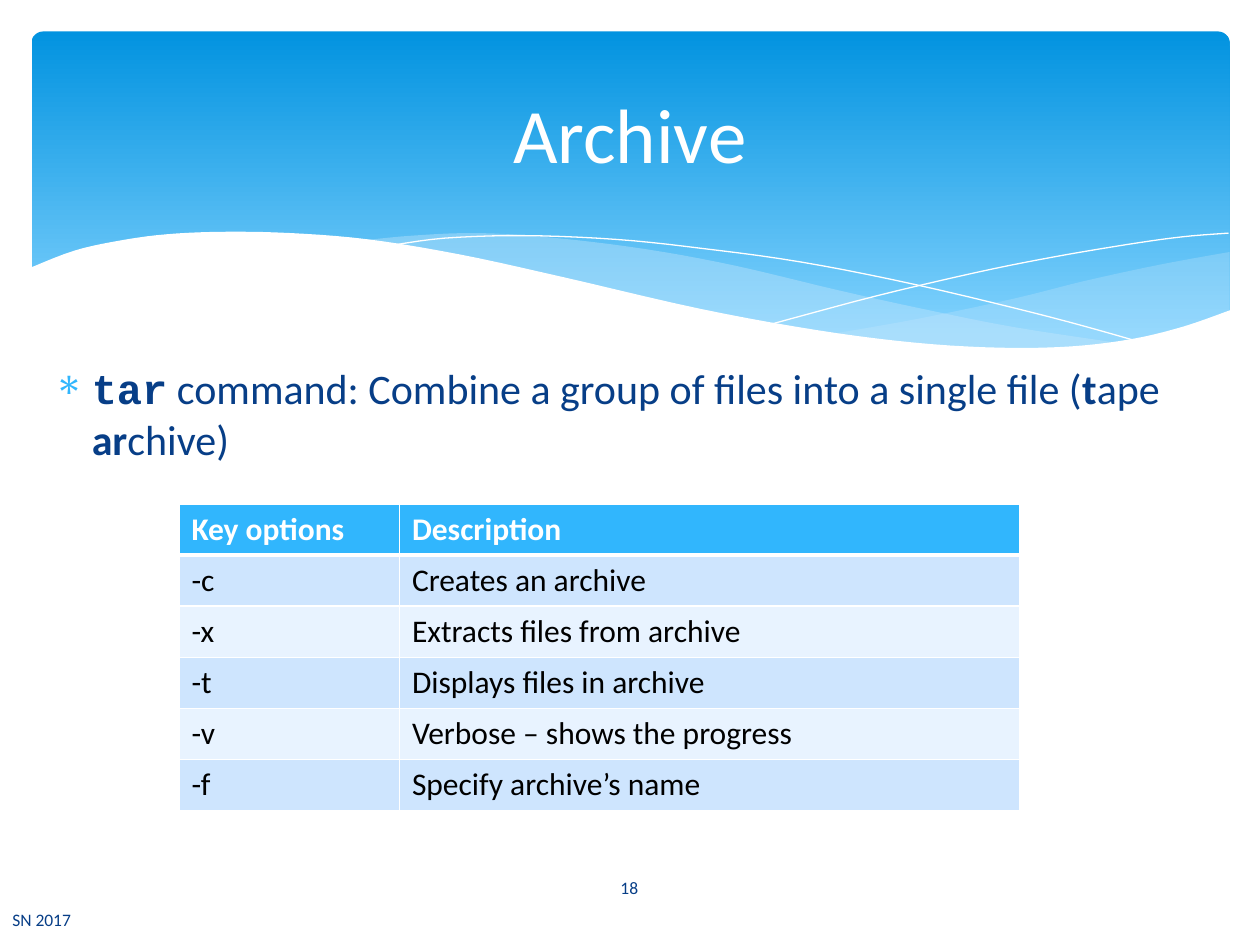
import pptx
import pptx.dml.color
import pptx.enum.shapes
import pptx.enum.text
import pptx.oxml
import pptx.oxml.ns
import pptx.util
from pptx.util import Inches

NAVY, SKY, WHITE, BLACK, ICE = "073E87", "31B6FD", "FFFFFF", "000000", "C6E7FC"
BANDS = ("CEE5FE", "E8F3FF")
ALIGN = pptx.enum.text.PP_ALIGN
ANCHOR = pptx.enum.text.MSO_ANCHOR

OPTIONS = [
    ("Key options", "Description"),
    ("-c", "Creates an archive"),
    ("-x", "Extracts files from archive"),
    ("-t", "Displays files in archive"),
    ("-v", "Verbose – shows the progress"),
    ("-f", "Specify archive’s name"),
]

RIGHT_WAVE_TOP = [(6.61, 2.65), (7.29, 2.53), (8.05, 2.37), (8.61, 2.23),
                  (9.21, 2.1), (9.76, 2)]
RIGHT_WAVE_BOTTOM = [(9.76, 2.47), (9.35, 2.62), (8.89, 2.72), (8.44, 2.77),
                     (8.03, 2.78), (7.45, 2.75), (6.61, 2.65)]
MIDDLE_WAVE_TOP = [(2.86, 1.91), (3.28, 1.87), (3.8, 1.85), (4.42, 1.89), (5.14, 1.98),
                   (5.84, 2.11), (6.68, 2.31), (7.41, 2.47), (8.07, 2.6), (8.93, 2.73)]
MIDDLE_WAVE_BOTTOM = [(8.93, 2.73), (8.57, 2.77), (8.07, 2.78), (7.48, 2.76), (6.8, 2.68),
                      (6.01, 2.55), (5.3, 2.4), (4.49, 2.22), (3.83, 2.07), (2.86, 1.91)]
FALLING_LINE = [(3.09, 1.95), (3.53, 1.89), (4.16, 1.87), (4.89, 1.9), (5.56, 1.97),
                (6.36, 2.08), (7.27, 2.26), (8.31, 2.51), (9.07, 2.72)]
RISING_LINE = [(6.13, 2.57), (6.95, 2.35), (7.76, 2.16), (8.36, 2.04), (8.95, 1.94),
               (9.38, 1.88), (9.75, 1.85)]
BANNER_EDGE = [(9.77, 2.46), (9.4, 2.59), (8.99, 2.69), (8.5, 2.75), (7.93, 2.76),
               (7.26, 2.72), (6.48, 2.62), (5.55, 2.45), (4.47, 2.2), (3.65, 2.02),
               (2.92, 1.9), (2.3, 1.85), (1.77, 1.84), (1.32, 1.86), (0.95, 1.91),
               (0.59, 1.99), (0.23, 2.13)]


def color(hex_string):
    return pptx.dml.color.RGBColor.from_string(hex_string)


def smooth(points, steps=5):
    """Return a Catmull-Rom curve through the points as a dense point list."""
    padded = [points[0], *points, points[-1]]
    curve = []
    for a, b, c, d in zip(padded, padded[1:], padded[2:], padded[3:]):
        for step in range(steps):
            t = step / steps
            curve.append(tuple(
                q + t * (r - p) / 2 + t**2 * (p - 2.5 * q + 2 * r - s / 2)
                + t**3 * (3 * q - p - 3 * r + s) / 2
                for p, q, r, s in zip(a, b, c, d)))
    return curve + [points[-1]]


class SlideBuilder:
    font = "Calibri"

    def __init__(self, presentation):
        self.slide = presentation.slides.add_slide(presentation.slide_layouts[5])
        self.shapes = self.slide.shapes

    def style_run(self, run, size, hex_color, bold=False, font=None):
        run.font.size = pptx.util.Pt(size)
        run.font.name = font or self.font
        run.font.bold = bold
        run.font.color.rgb = color(hex_color)

    def place_text(self, shape, box, text, size, hex_color, align):
        shape.left, shape.top, shape.width, shape.height = map(Inches, box)
        frame = shape.text_frame
        frame.text = text
        frame.word_wrap = True
        frame.vertical_anchor = ANCHOR.MIDDLE
        frame.paragraphs[0].alignment = align
        self.style_run(frame.paragraphs[0].runs[0], size, hex_color)

    def title(self, box, text):
        title = self.shapes.title
        self.place_text(title, box, text, 44, WHITE, ALIGN.CENTER)
        title.element.getparent().append(title.element)  # in front of the banner

    def label(self, box, text, align=ALIGN.LEFT):
        shape = self.shapes.add_textbox(0, 0, 0, 0)
        self.place_text(shape, box, text, 10, NAVY, align)

    def bullet(self, box, runs):
        frame = self.shapes.add_textbox(*map(Inches, box)).text_frame
        frame.word_wrap = True
        paragraph = frame.paragraphs[0]
        paragraph.space_before = pptx.util.Pt(4.8)
        for text, bold, font in runs:
            run = paragraph.add_run()
            run.text = text
            self.style_run(run, 24, NAVY, bold, font)
        properties = paragraph._p.get_or_add_pPr()
        properties.set("marL", str(Inches(0.3)))
        properties.set("indent", str(Inches(-0.3)))
        marker = pptx.oxml.ns.qn("a:buClr")
        bullet_color = properties.makeelement(marker, {})
        properties.append(bullet_color)
        bullet_color.append(bullet_color.makeelement(pptx.oxml.ns.qn("a:srgbClr"), {"val": SKY}))
        properties.append(properties.makeelement(pptx.oxml.ns.qn("a:buChar"), {"char": "∗"}))

    def banner(self, box):
        shape = self.shapes.add_shape(
            pptx.enum.shapes.MSO_SHAPE.ROUNDED_RECTANGLE, *map(Inches, box))
        shape.adjustments[0] = 0.034
        shape.shadow.inherit = False
        shape.line.fill.background()
        shape.fill.gradient()
        shape.fill.gradient_angle = 270
        stops = shape.fill.gradient_stops
        for stop, position, hex_color in zip(stops, (0, 0.9), ("0293E0", "83D3FE")):
            stop.position = position
            stop.color.rgb = color(hex_color)

    def outline(self, points, closed):
        points = [(Inches(x), Inches(y)) for x, y in points]
        builder = self.shapes.build_freeform(*points[0])
        builder.add_line_segments(points[1:], close=closed)
        shape = builder.convert_to_shape()
        shape.shadow.inherit = False
        return shape

    def wave(self, points, hex_color, opacity=100):
        shape = self.outline(points, closed=True)
        shape.line.fill.background()
        shape.fill.solid()
        shape.fill.fore_color.rgb = color(hex_color)
        if opacity < 100:
            fill = shape.element.spPr.find(pptx.oxml.ns.qn("a:solidFill"))
            fill[0].append(fill.makeelement(
                pptx.oxml.ns.qn("a:alpha"), {"val": str(opacity * 1000)}))

    def hairline(self, points):
        shape = self.outline(points, closed=False)
        shape.fill.background()
        shape.line.color.rgb = color(WHITE)
        shape.line.width = 0

    def cell_borders(self, cell, top, bottom):
        properties = cell._tc.get_or_add_tcPr()
        for side, points in (("L", 1), ("R", 1), ("T", top), ("B", bottom)):
            properties.append(pptx.oxml.parse_xml(
                f'<a:ln{side} {pptx.oxml.ns.nsdecls("a")} w="{pptx.util.Pt(points)}">'
                f'<a:solidFill><a:srgbClr val="{WHITE}"/></a:solidFill></a:ln{side}>'))

    def table(self, box, column_widths, rows):
        table = self.shapes.add_table(
            len(rows), len(column_widths), *map(Inches, box)).table
        for column, width in zip(table.columns, column_widths):
            column.width = Inches(width)
        for r, texts in enumerate(rows):
            header = r == 0
            for c, text in enumerate(texts):
                cell = table.cell(r, c)
                cell.text_frame.text = text
                self.style_run(cell.text_frame.paragraphs[0].runs[0], 18,
                               WHITE if header else BLACK, bold=header)
                self.cell_borders(cell, 3 if r == 1 else 1, 3 if header else 1)
                cell.fill.solid()
                cell.fill.fore_color.rgb = color(SKY if header else BANDS[(r - 1) % 2])


def main():
    presentation = pptx.Presentation()
    presentation.slide_width, presentation.slide_height = Inches(10), Inches(7.5)
    builder = SlideBuilder(presentation)

    builder.banner((0.25, 0.25, 9.51, 2.7))
    builder.wave(smooth(RIGHT_WAVE_TOP) + smooth(RIGHT_WAVE_BOTTOM), ICE, 29)
    builder.wave(smooth(MIDDLE_WAVE_TOP) + smooth(MIDDLE_WAVE_BOTTOM), ICE, 40)
    builder.hairline(smooth(FALLING_LINE))
    builder.hairline(smooth(RISING_LINE))
    builder.wave(smooth(BANNER_EDGE) + [(0.23, 3.29), (9.77, 3.29)], WHITE)

    builder.bullet((0.33, 2.83, 9.42, 3.77), [
        ("tar", True, "Courier New"),
        (" command: Combine a group of files into a single file (", False, None),
        ("t", True, None), ("ape ", False, None),
        ("ar", True, None), ("chive)", False, None),
    ])
    builder.label((4.36, 6.84, 1.27, 0.4), "18", ALIGN.CENTER)
    builder.title((0.5, 0.37, 9, 1.37), "Archive")
    builder.table((1.42, 4, 6.67, 2.43), (1.75, 4.92), OPTIONS)
    builder.label((0, 7.1, 4.14, 0.4), "SN 2017")
    presentation.save("out.pptx")


if __name__ == "__main__":
    main()
